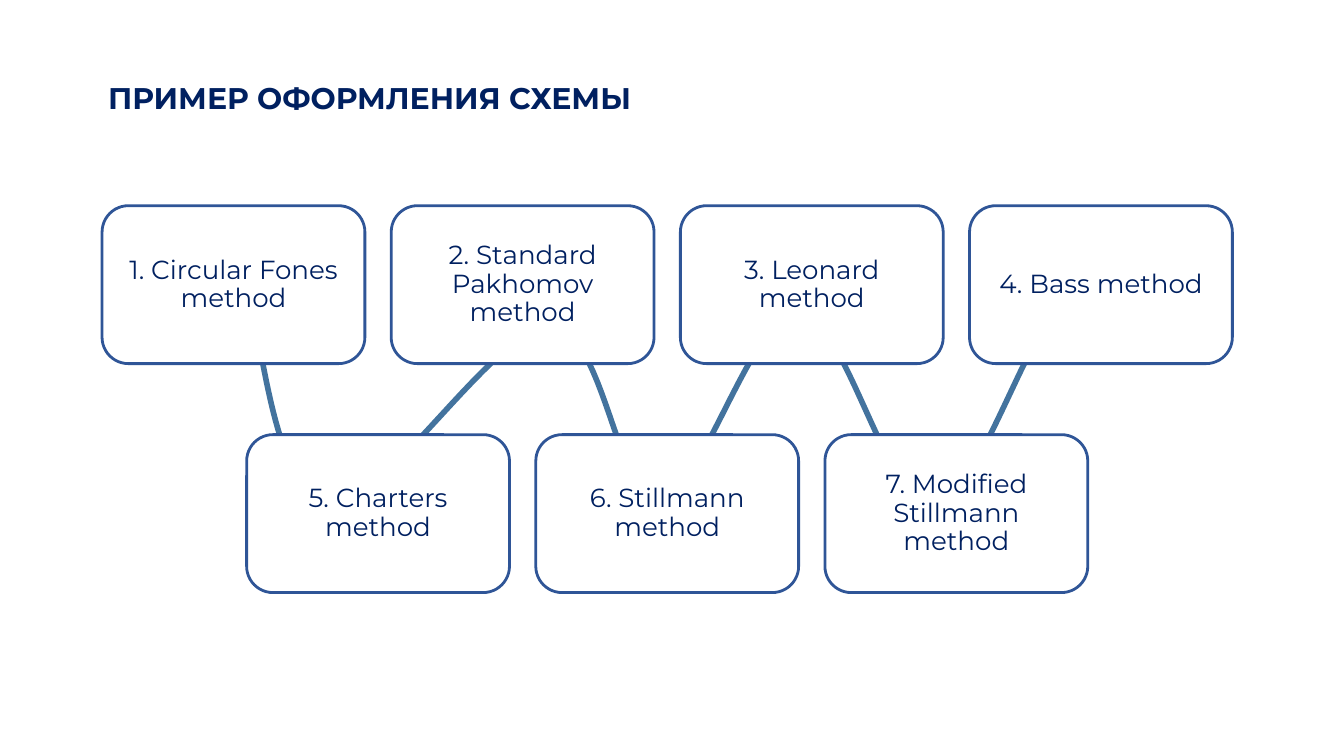
from pptx import Presentation
from pptx import util as u
from pptx.dml.color import RGBColor
from pptx.enum import shapes, text

Pt = u.Pt
NAVY, BORDER, PATH_BLUE, WHITE = "002060", "2F5597", "43739E", "FFFFFF"


def color(value):
    return RGBColor.from_string(value)


def add_run(paragraph, wording, size, bold=False):
    run = paragraph.add_run()
    run.text = wording
    run.font.name = "Montserrat"
    run.font.size = Pt(size)
    run.font.bold = bold
    run.font.color.rgb = color(NAVY)


presentation = Presentation()
presentation.slide_width, presentation.slide_height = Pt(1440), Pt(810)
slide = presentation.slides.add_slide(presentation.slide_layouts[6])

# Wavy line behind the boxes: a start point, then cubic Bezier segments
start = (274.3, 350.6)
segments = [
    [(291.6, 444.2), (308.2, 538.6), (360.7, 538.6)],
    [(413.3, 538.6), (532.8, 349.2), (589.7, 349.2)],
    [(647.3, 349.2), (661.7, 540), (706.3, 537.1)],
    [(750.2, 534.2), (807.1, 331.9), (855.4, 333.4)],
    [(904.3, 334.8), (951.1, 545), (999.4, 544.3)],
    [(1046.9, 544.3), (1113.1, 313.2), (1142.6, 331.9)],
]
STEPS = 24
points = []
first = start
for second, third, last in segments:
    for step in range(1, STEPS + 1):
        t = step / STEPS
        weights = ((1 - t) ** 3, 3 * t * (1 - t) ** 2, 3 * t ** 2 * (1 - t), t ** 3)
        corners = (first, second, third, last)
        points.append(tuple(
            Pt(sum(weight * corner[axis] for weight, corner in zip(weights, corners)))
            for axis in (0, 1)))
    first = last
builder = slide.shapes.build_freeform(Pt(start[0]), Pt(start[1]))
builder.add_line_segments(points, close=False)
wave = builder.convert_to_shape()
wave.shadow.inherit = False
wave.fill.background()
wave.line.color.rgb = color(PATH_BLUE)
wave.line.width = Pt(6)

title = slide.shapes.add_textbox(Pt(108.7), Pt(64.8), Pt(985.7), Pt(79.2))
title.text_frame.word_wrap = True
title.text_frame.vertical_anchor = text.MSO_ANCHOR.MIDDLE
add_run(title.text_frame.paragraphs[0], "ПРИМЕР ОФОРМЛЕНИЯ СХЕМЫ", 32, bold=True)

# Two rows of boxes, the lower one shifted by half a step
LEFT, STEP_X, BOX_WIDTH, BOX_HEIGHT = 109.4, 309.8, 281.6, 169.2
rows = [
    (LEFT, 220.4, ["1. Circular Fones method", "2. Standard Pakhomov method",
                   "3. Leonard method", "4. Bass method"]),
    (LEFT + STEP_X / 2, 465.7, ["5. Charters method", "6. Stillmann method",
                                "7. Modified Stillmann method"]),
]
for row_left, top, methods in rows:
    for column, method in enumerate(methods):
        box = slide.shapes.add_shape(
            shapes.MSO_SHAPE.ROUNDED_RECTANGLE,
            Pt(row_left + column * STEP_X), Pt(top), Pt(BOX_WIDTH), Pt(BOX_HEIGHT))
        box.shadow.inherit = False
        box.fill.solid()
        box.fill.fore_color.rgb = color(WHITE)
        box.line.color.rgb = color(BORDER)
        box.line.width = Pt(3)
        frame = box.text_frame
        frame.word_wrap = True
        frame.vertical_anchor = text.MSO_ANCHOR.MIDDLE
        frame.margin_left = frame.margin_right = Pt(8.3)
        frame.margin_top = frame.margin_bottom = Pt(8.3)
        paragraph = frame.paragraphs[0]
        paragraph.alignment = text.PP_ALIGN.CENTER
        paragraph.line_spacing = 0.9
        add_run(paragraph, method, 28)

presentation.save("out.pptx")
